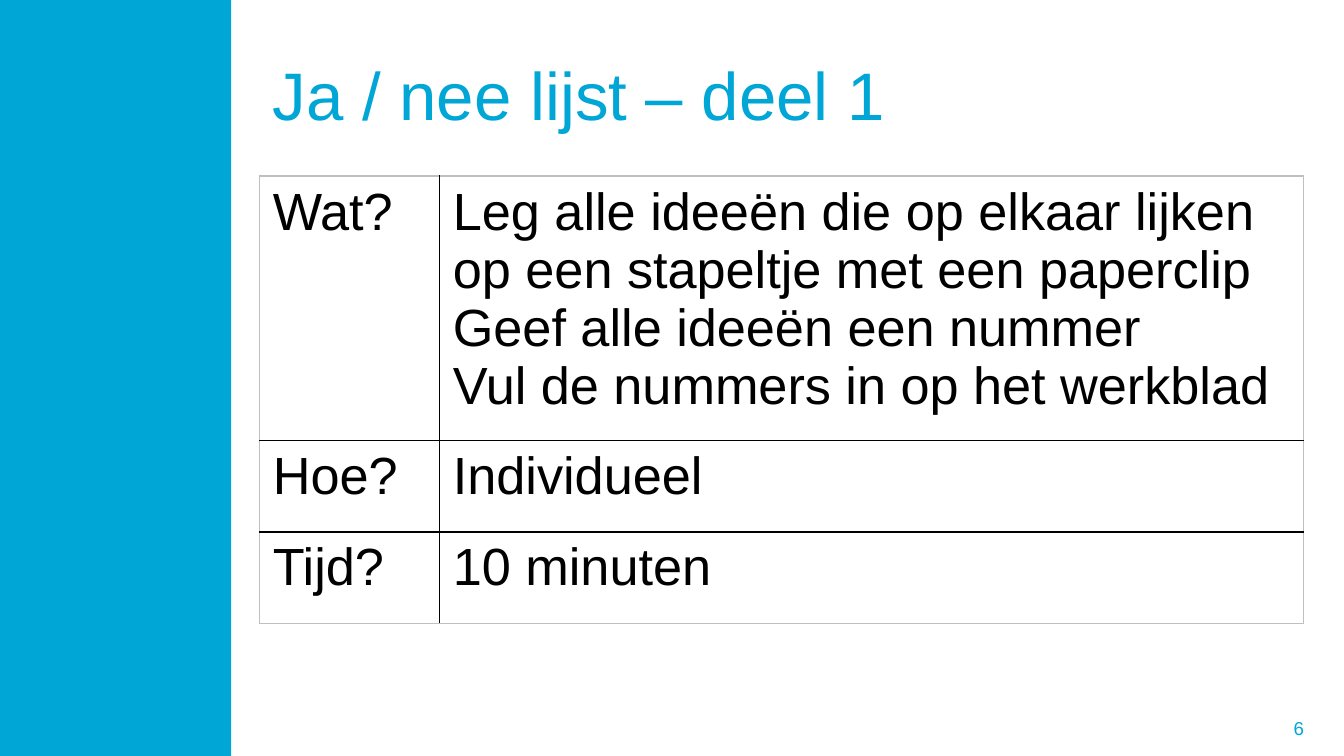
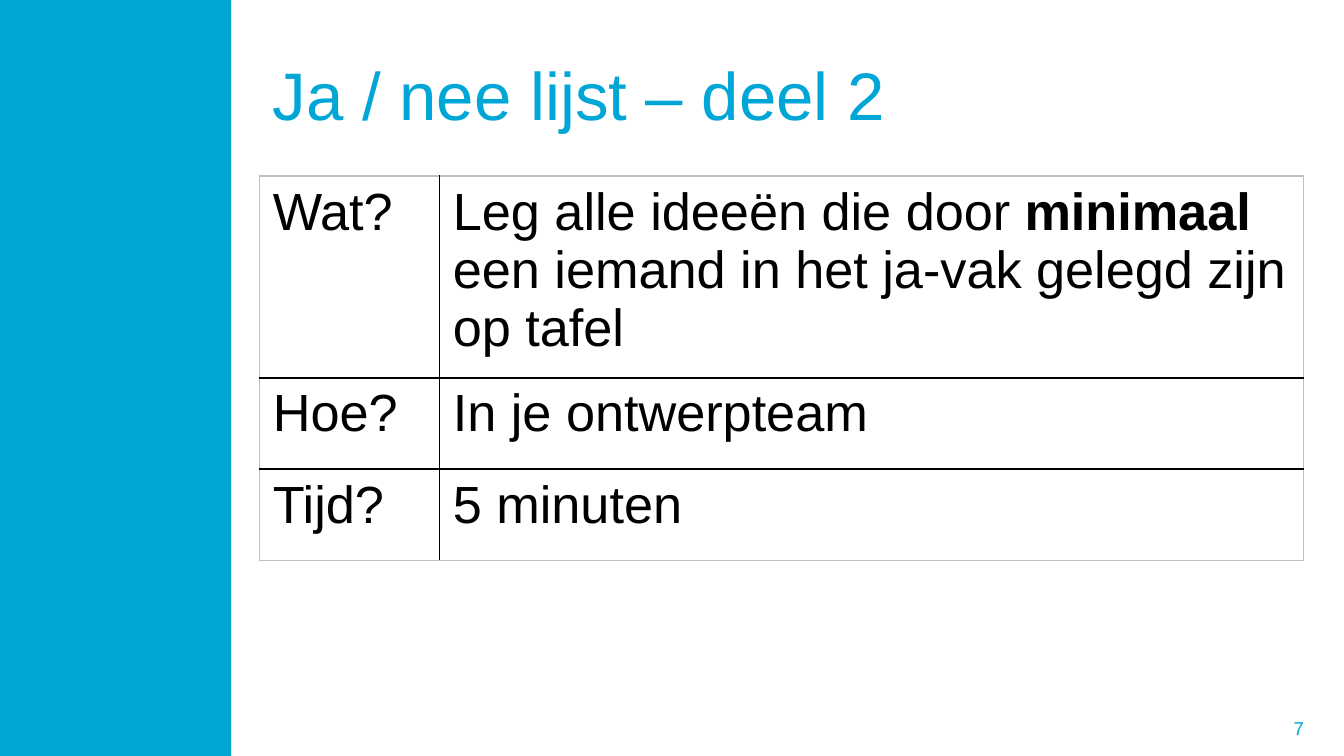
from dataclasses import dataclass

from lxml import etree
from pptx import Presentation
from pptx.dml.color import RGBColor
from pptx.enum.shapes import MSO_SHAPE
from pptx.enum.text import MSO_ANCHOR, MSO_AUTO_SIZE, PP_ALIGN
from pptx.oxml.ns import qn
from pptx.slide import Slide
from pptx.text.text import TextFrame
from pptx.util import Inches, Length, Pt

RECTANGLE = MSO_SHAPE.RECTANGLE
MIDDLE = MSO_ANCHOR.MIDDLE
NO_AUTOFIT = MSO_AUTO_SIZE.NONE
LEFT, RIGHT = PP_ALIGN.LEFT, PP_ALIGN.RIGHT
TITLE_ONLY = 5


@dataclass(frozen=True)
class Theme:
    font: str = "Arial"
    accent: str = "00A6D6"
    ink: str = "000000"
    outer_line: str = "BFBFBF"
    title_size: Length = Pt(36)
    table_size: Length = Pt(28)
    number_size: Length = Pt(10)
    inner_width: Length = Pt(1)
    outer_width: Length = Pt(0.75)


@dataclass(frozen=True)
class Run:
    text: str
    bold: bool = False


Paragraphs = list[list[Run]]


@dataclass(frozen=True)
class Assignment:
    number: int
    title: str
    what: Paragraphs
    how: str
    time: str


THEME = Theme()
SLIDE_WIDTH = Inches(10)
SLIDE_HEIGHT = SLIDE_WIDTH * 9 // 16
CONTENT_LEFT, CONTENT_WIDTH = Inches(1.93), Inches(7.77)
COLUMN_WIDTHS = (Inches(1.34), Inches(6.43))
ROW_HEIGHTS = (Inches(1.17), Inches(0.68), Inches(0.68))

ASSIGNMENTS = [
    Assignment(
        6, "Ja / nee lijst – deel 1",
        [
            [Run("Leg alle ideeën die op elkaar lijken op een stapeltje met een paperclip")],
            [Run("Geef alle ideeën een nummer")],
            [Run("Vul de nummers in op het werkblad")],
        ],
        "Individueel", "10 minuten",
    ),
    Assignment(
        7, "Ja / nee lijst – deel 2",
        [[
            Run("Leg alle ideeën die door "),
            Run("minimaal", bold=True),
            Run(" een iemand in het ja-vak gelegd zijn op tafel"),
        ]],
        "In je ontwerpteam", "5 minuten",
    ),
]


def write(frame: TextFrame, paragraphs: Paragraphs, size: Length, color: str,
          align: PP_ALIGN = LEFT) -> None:
    for index, runs in enumerate(paragraphs):
        paragraph = frame.add_paragraph() if index else frame.paragraphs[0]
        paragraph.alignment = align
        for part in runs:
            run = paragraph.add_run()
            run.text = part.text
            run.font.name = THEME.font
            run.font.size = size
            run.font.bold = part.bold
            run.font.color.rgb = RGBColor.from_string(color)


def add_number(slide: Slide, number: int) -> None:
    frame = slide.shapes.add_textbox(
        Inches(7.27), Inches(5.27), Inches(2.53), Inches(0.3)).text_frame
    frame.word_wrap = True
    frame.vertical_anchor = MIDDLE
    write(frame, [[Run(str(number))]], THEME.number_size, THEME.accent, RIGHT)


def add_band(slide: Slide) -> None:
    band = slide.shapes.add_shape(RECTANGLE, 0, 0, Inches(1.72), SLIDE_HEIGHT)
    band.shadow.inherit = False
    band.fill.solid()
    band.fill.fore_color.rgb = RGBColor.from_string(THEME.accent)
    band.line.fill.background()


def set_title(slide: Slide, text: str) -> None:
    title = slide.shapes.title
    title.left, title.top = CONTENT_LEFT, Inches(0.23)
    title.width, title.height = CONTENT_WIDTH, Inches(0.94)
    title.text_frame.auto_size = NO_AUTOFIT
    title.text_frame.vertical_anchor = MIDDLE
    write(title.text_frame, [[Run(text)]], THEME.title_size, THEME.accent)


def set_border(cell, edge: str, outer: bool) -> None:
    width = THEME.outer_width if outer else THEME.inner_width
    color = THEME.outer_line if outer else THEME.ink
    properties = cell._tc.get_or_add_tcPr()
    line = etree.SubElement(properties, qn(f"a:{edge}"), w=str(int(width)))
    fill = etree.SubElement(line, qn("a:solidFill"))
    etree.SubElement(fill, qn("a:srgbClr"), val=color)


def add_assignment_table(slide: Slide, assignment: Assignment) -> None:
    rows = [
        ("Wat?", assignment.what),
        ("Hoe?", [[Run(assignment.how)]]),
        ("Tijd?", [[Run(assignment.time)]]),
    ]
    last_row, last_column = len(rows) - 1, len(COLUMN_WIDTHS) - 1
    # Row heights are minimums: the first row grows with its text
    table = slide.shapes.add_table(
        len(rows), len(COLUMN_WIDTHS), CONTENT_LEFT, Inches(1.31),
        CONTENT_WIDTH, sum(ROW_HEIGHTS)).table
    table.first_row = table.horz_banding = False
    for column, width in zip(table.columns, COLUMN_WIDTHS):
        column.width = width
    for row, height in zip(table.rows, ROW_HEIGHTS):
        row.height = height

    for r, (label, answer) in enumerate(rows):
        for c, paragraphs in enumerate(([[Run(label)]], answer)):
            cell = table.cell(r, c)
            set_border(cell, "lnL", c == 0)
            set_border(cell, "lnR", c == last_column)
            set_border(cell, "lnT", r == 0)
            set_border(cell, "lnB", r == last_row)
            cell.fill.background()
            write(cell.text_frame, paragraphs, THEME.table_size, THEME.ink)


def main() -> None:
    deck = Presentation()
    deck.slide_width, deck.slide_height = SLIDE_WIDTH, SLIDE_HEIGHT
    for assignment in ASSIGNMENTS:
        slide = deck.slides.add_slide(deck.slide_layouts[TITLE_ONLY])
        # Shared frame: page number, side band and title
        add_number(slide, assignment.number)
        add_band(slide)
        set_title(slide, assignment.title)
        # Content
        add_assignment_table(slide, assignment)
    deck.save("out.pptx")


if __name__ == "__main__":
    main()
